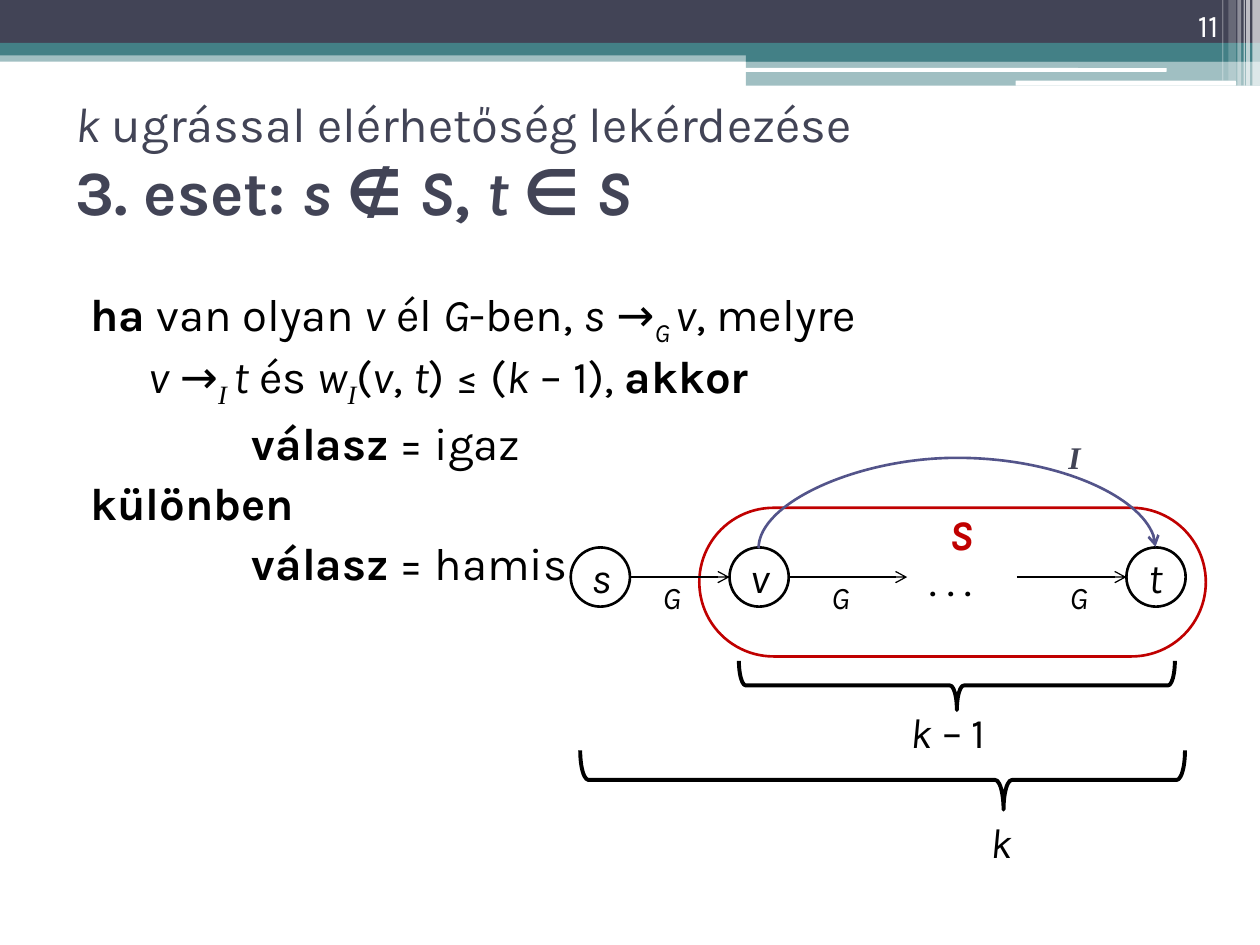
from dataclasses import dataclass
from typing import NamedTuple

from pptx import Presentation
from pptx.dml.color import RGBColor
from pptx.enum.shapes import MSO_CONNECTOR, MSO_SHAPE
from pptx.enum.text import MSO_ANCHOR, PP_ALIGN
from pptx.oxml.ns import qn
from pptx.util import Inches, Pt
from lxml.etree import SubElement


@dataclass(frozen=True)
class Theme:
    font: str = "Karla"
    serif: str = "Times New Roman"
    black: str = "000000"
    white: str = "FFFFFF"
    navy: str = "424456"
    teal: str = "438086"
    red: str = "C00000"
    violet: str = "53548A"
    small: float = 18
    large: float = 24
    body: float = 26
    lead: float = 28
    head: float = 36


class Bar(NamedTuple):
    left: float
    top: float
    width: float
    height: float
    color: str
    alpha: int = 100
    kind: MSO_SHAPE = MSO_SHAPE.RECTANGLE


class Bit(NamedTuple):
    """A piece of text; marks: b bold, i italic, s subscript, t serif."""
    text: str
    marks: str = ""


class Label(NamedTuple):
    left: float
    top: float
    width: float
    words: list
    size: float
    color: str


class Brace(NamedTuple):
    left: float
    top: float
    width: float
    height: float
    tip: float


T = Theme()
ROUND = MSO_SHAPE.ROUNDED_RECTANGLE
BARS = [
    Bar(0, 0.4, 10, 0.09, T.teal, 50),
    Bar(0, 0, 10, 0.34, T.navy),
    Bar(0, 0.34, 10, 0.1, T.teal),
    Bar(5.92, 0.39, 4.08, 0.1, T.teal),
    Bar(5.92, 0.48, 4.08, 0.2, T.teal, 50),
    Bar(5.91, 0.54, 3.35, 0.03, T.white, kind=ROUND),
    Bar(8.06, 0.64, 1.75, 0.04, T.white, kind=ROUND),
    Bar(9.94, 0, 0.06, 0.68, T.white, 65),
    Bar(9.89, 0, 0.03, 0.68, T.white, 65),
    Bar(9.87, 0, 0.01, 0.68, T.white, 60),
    Bar(9.82, 0, 0.03, 0.68, T.white, 40),
    Bar(9.75, 0, 0.06, 0.64, T.white, 20),
    Bar(9.7, 0, 0.01, 0.64, T.white, 30),
]
LEAD = [Bit("k", "i"), Bit(" ugrással elérhetőség lekérdezése")]
HEAD = [Bit("3. eset: ", "b"), Bit("s ", "bi"), Bit("∉ ", "b"), Bit("S", "bi"),
        Bit(", ", "b"), Bit("t ", "bi"), Bit("∈ ", "b"), Bit("S", "bi")]
TEST = [Bit("ha", "b"), Bit(" van olyan "), Bit("v", "i"), Bit(" él "),
        Bit("G", "i"), Bit("-ben, "), Bit("s", "i"), Bit(" →"),
        Bit("G ", "is"), Bit("v", "i"), Bit(", melyre")]
BOUND = [Bit("v", "i"), Bit(" →"), Bit("I ", "ist"), Bit("t", "i"),
         Bit(" és "), Bit("w", "i"), Bit("I", "ist"), Bit("("),
         Bit("v", "i"), Bit(", "), Bit("t", "i"), Bit(") ≤ ("),
         Bit("k", "i"), Bit(" – 1), "), Bit("akkor", "b")]
# Left margin, first-line indent and lines of each paragraph
CODE = [
    (0.58, -0.46, [TEST, BOUND]),
    (1.4, 0, [[Bit("válasz", "b"), Bit(" = igaz")]]),
    (0.4, -0.28, [[Bit("különben", "b")]]),
    (1.4, 0, [[Bit("válasz", "b"), Bit(" = hamis")]]),
]
NODE, MID = 0.47, 4.58
NODES = {"s": 4.53, "v": 5.79, "t": 8.94}
ARROWS = [(5, 5.79), (6.26, 7.2), (8.07, 8.94)]
BRACES = [Brace(7.4, 3.71, 0.39, 3.46, 0.5), Brace(6.77, 3.79, 0.47, 4.8, 0.7)]
LABELS = [
    Label(7.28, 4.35, 1.1, [Bit(". . .")], T.large, T.black),
    Label(7.44, 3.99, 0.55, [Bit("S", "bi")], T.large, T.red),
    Label(7.13, 5.56, 1.1, [Bit("k", "i"), Bit(" – 1")], T.large, T.black),
    Label(7.76, 6.43, 1.1, [Bit("k", "i")], T.large, T.black),
    Label(8.38, 3.43, 0.31, [Bit("I", "bit")], T.small, T.navy),
    *(Label(x, 4.54, 0.31, [Bit("G", "i")], T.small, T.black)
      for x in (5.16, 6.5, 8.39)),
]


def write(para, words: list, size: float, color: str) -> None:
    for bit in words:
        run = para.add_run()
        run.text = bit.text
        font = run.font
        font.name = T.serif if "t" in bit.marks else T.font
        font.size = Pt(size)
        font.bold, font.italic = "b" in bit.marks, "i" in bit.marks
        font.color.rgb = RGBColor.from_string(color)
        if "s" in bit.marks:
            run._r.get_or_add_rPr().set("baseline", "-25000")


def add_box(shapes, left: float, top: float, width: float, height: float):
    box = shapes.add_textbox(*map(Inches, (left, top, width, height)))
    box.text_frame.word_wrap = True
    return box.text_frame


def add_form(shapes, kind, box: tuple, fill: str = "", line: str = "", weight: float = 1.5):
    form = shapes.add_shape(kind, *map(Inches, box))
    form.shadow.inherit = False
    if fill:
        form.fill.solid()
        form.fill.fore_color.rgb = RGBColor.from_string(fill)
    else:
        form.fill.background()
    if line:
        form.line.color.rgb = RGBColor.from_string(line)
        form.line.width = Pt(weight)
    else:
        form.line.fill.background()
    return form


def add_bar(shapes, bar: Bar) -> None:
    form = add_form(shapes, bar.kind, bar[:4], bar.color)
    if bar.alpha < 100:
        tint = form._element.spPr.find(".//" + qn("a:srgbClr"))
        SubElement(tint, qn("a:alpha"), val=str(bar.alpha * 1000))


def add_arrow(shapes, kind, ends: tuple, color: str, weight: float):
    link = shapes.add_connector(kind, *map(Inches, ends))
    link.line.color.rgb = RGBColor.from_string(color)
    link.line.width = Pt(weight)
    SubElement(link.line._get_or_add_ln(), qn("a:tailEnd"), type="arrow")
    SubElement(link._element.spPr, qn("a:effectLst"))
    return link


def add_arc(shapes) -> None:
    """Bow from v to t: a curved connector turned a quarter, bent far out."""
    link = add_arrow(shapes, MSO_CONNECTOR.CURVE, (7.6, 5.92, 7.59, 2.77), T.violet, 1.5)
    props = link._element.spPr
    props.xfrm.set("rot", str(90 * 60000))
    guides = props.find(qn("a:prstGeom")).get_or_add_avLst()
    SubElement(guides, qn("a:gd"), name="adj1", fmla="val 7280000")


def add_node(shapes, name: str, left: float) -> None:
    node = add_form(shapes, MSO_SHAPE.OVAL, (left, MID - NODE / 2, NODE, NODE),
                    T.white, T.black)
    node.text_frame.vertical_anchor = MSO_ANCHOR.MIDDLE
    para = node.text_frame.paragraphs[0]
    para.alignment = PP_ALIGN.CENTER
    write(para, [Bit(name, "i")], T.large, T.black)


def add_brace(shapes, brace: Brace) -> None:
    form = add_form(shapes, MSO_SHAPE.LEFT_BRACE, brace[:4], line=T.black, weight=2.25)
    form.rotation = 270
    form.adjustments[0], form.adjustments[1] = 0.14, brace.tip


def add_title(shapes) -> None:
    frame = add_box(shapes, 0.5, 0.69, 9, 1.17)
    frame.vertical_anchor = MSO_ANCHOR.MIDDLE
    para = frame.paragraphs[0]
    write(para, LEAD, T.lead, T.navy)
    para.add_line_break()
    write(para, HEAD, T.head, T.navy)


def add_code(shapes) -> None:
    frame = add_box(shapes, 0.5, 2.22, 9, 3.34)
    for spot, (margin, indent, lines) in enumerate(CODE):
        para = frame.add_paragraph() if spot else frame.paragraphs[0]
        para.space_before = Pt(3)
        props = para._p.get_or_add_pPr()
        props.set("marL", str(Inches(margin)))
        props.set("indent", str(Inches(indent)))
        for row, words in enumerate(lines):
            if row:
                para.add_line_break()
            write(para, words, T.body, T.black)


def main() -> None:
    deck = Presentation()
    deck.slide_width, deck.slide_height = Inches(10), Inches(7.5)
    shapes = deck.slides.add_slide(deck.slide_layouts[6]).shapes
    for bar in BARS:
        add_bar(shapes, bar)
    ring = add_form(shapes, ROUND, (5.55, 4.03, 4.02, 1.18), T.white, T.red)
    ring.adjustments[0] = 0.5
    add_title(shapes)
    add_code(shapes)
    for start, end in ARROWS:
        add_arrow(shapes, MSO_CONNECTOR.STRAIGHT, (start, MID, end, MID), T.black, 0.75)
    for name, left in NODES.items():
        add_node(shapes, name, left)
    for brace in BRACES:
        add_brace(shapes, brace)
    add_arc(shapes)
    for label in LABELS:
        frame = add_box(shapes, *label[:3], 0.5 if label.size == T.large else 0.4)
        write(frame.paragraphs[0], label.words, label.size, label.color)
    page = add_box(shapes, 8.94, 0, 0.83, 0.4)
    page.vertical_anchor = MSO_ANCHOR.BOTTOM
    page.paragraphs[0].alignment = PP_ALIGN.RIGHT
    write(page.paragraphs[0], [Bit("11")], T.small, T.white)
    deck.save("out.pptx")


if __name__ == "__main__":
    main()
